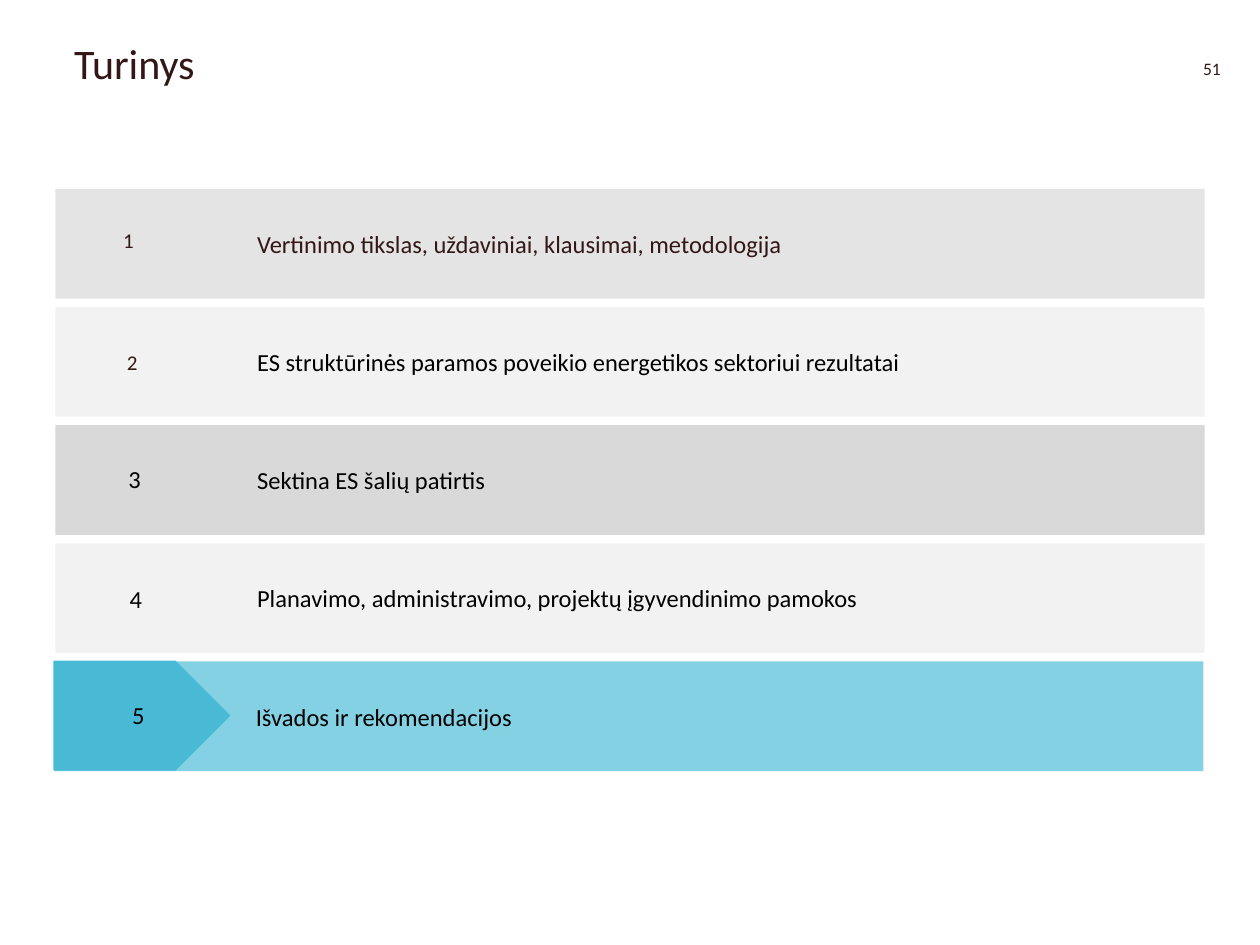
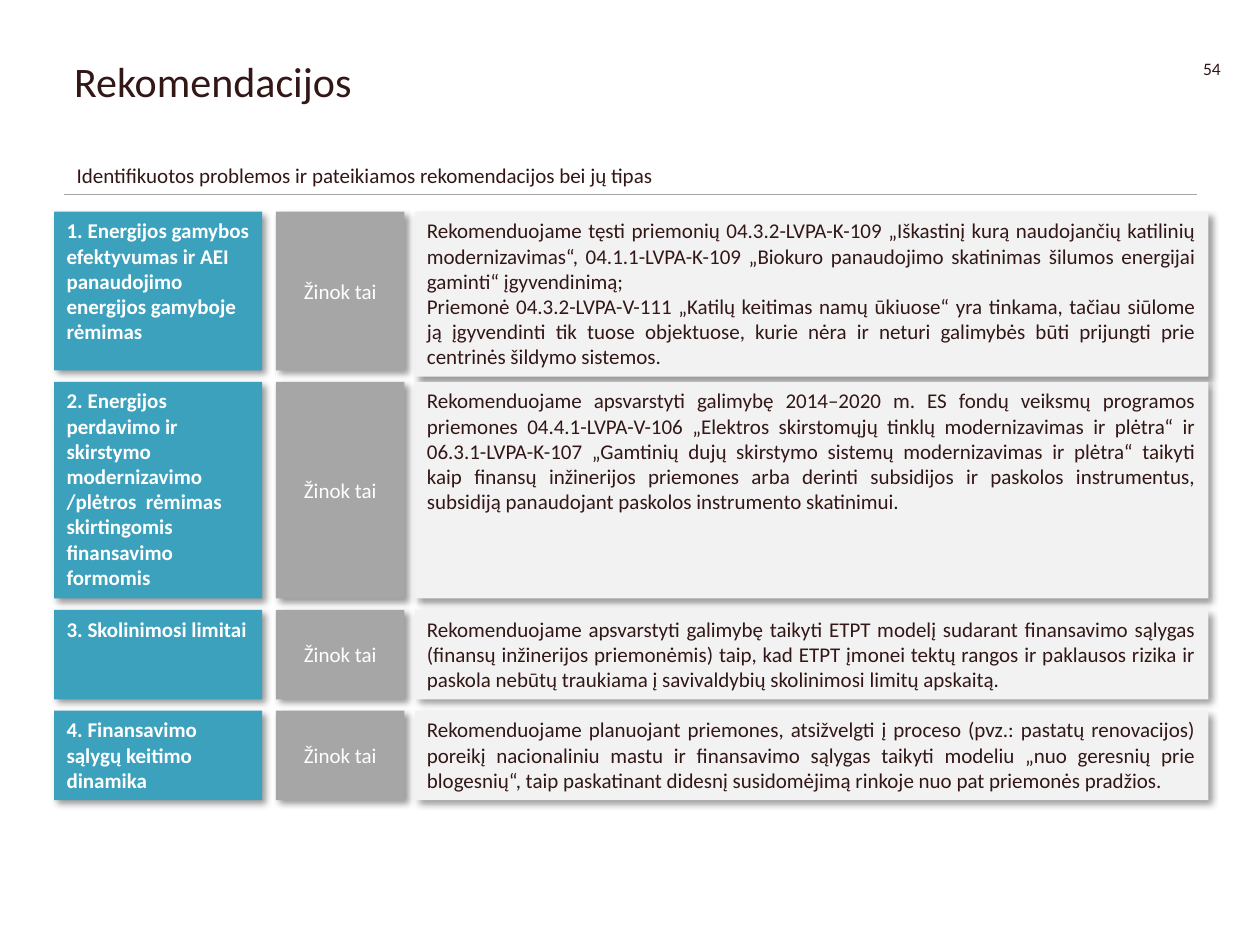
from lxml import etree
from pptx import Presentation
from pptx.dml.color import RGBColor as RGB
from pptx.enum.shapes import MSO_CONNECTOR as LINE, MSO_SHAPE as SHAPE
from pptx.enum.text import MSO_ANCHOR as ANCHOR, PP_ALIGN as ALIGN
from pptx.oxml import parse_xml
from pptx.oxml.ns import nsdecls, qn
from pptx.util import Inches, Pt

HUE = {
    "text": "321716", "black": "000000", "white": "FFFFFF",
    "grey": "D9D9D9", "pale": "F2F2F2", "mid": "A6A6A6",
    "aqua": "85D1E4", "blue": "48BAD6", "teal": "3BA1BC",
}
FONT = "Calibri"
SHADOW = (
    f'<a:effectLst {nsdecls("a")}><a:outerShdw blurRad="50800" dist="38100" '
    'dir="2700000" algn="tl" rotWithShape="0"><a:srgbClr val="000000">'
    '<a:alpha val="40000"/></a:srgbClr></a:outerShdw></a:effectLst>'
)


def box(slide, at, lines, size=12, hue="text", fill=None, kind=SHAPE.RECTANGLE,
        align=ALIGN.LEFT, anchor=ANCHOR.TOP, bold=False, space=None,
        inset=0.1, wrap=True, shade=False):
    """Add a text box, or a filled shape when a fill is given."""
    place = [Inches(v) for v in at]
    if fill:
        shape = slide.shapes.add_shape(kind, *place)
        shape.fill.solid()
        shape.fill.fore_color.rgb = RGB.from_string(HUE[fill])
        shape.line.fill.background()
        shape.shadow.inherit = False
        if shade:
            props = shape._element.spPr
            props.replace(props.find(qn("a:effectLst")), parse_xml(SHADOW))
    else:
        shape = slide.shapes.add_textbox(*place)
    frame = shape.text_frame
    frame.word_wrap = wrap
    frame.vertical_anchor = anchor
    frame.margin_left = Inches(inset)
    for n, line in enumerate(lines):
        para = frame.add_paragraph() if n else frame.paragraphs[0]
        para.text = line
        para.alignment = align
        if space:
            para.line_spacing = space
        para.font.name = FONT
        para.font.size = Pt(size)
        para.font.bold = bold
        para.font.color.rgb = RGB.from_string(HUE[hue])
    return shape


def page(title, top, number):
    """Start a slide with its title and page number."""
    slide = deck.slides.add_slide(deck.slide_layouts[6])
    box(slide, (9.45, 0.41, 0.37, 0.27), [number], 10, wrap=False)
    box(slide, (0.49, top, 8.82, 1.18), [title], 24, space=0.9)
    return slide


deck = Presentation()
deck.slide_width = Inches(10)
deck.slide_height = Inches(7.5)

# Contents
slide = page("Turinys", 0.29, "51")
topics = [
    # topic, band, text colour, number left, drop and size
    ("Vertinimo tikslas, uždaviniai, klausimai, metodologija", "grey", "text", 0.88, 0.24, 12),
    ("ES struktūrinės paramos poveikio energetikos sektoriui rezultatai",
     "pale", "black", 0.91, 0.27, 12),
    ("Sektina ES šalių patirtis", "grey", "black", 0.92, 0.26, 14),
    ("Planavimo, administravimo, projektų įgyvendinimo pamokos",
     "pale", "black", 0.93, 0.27, 14),
    ("Išvados ir rekomendacijos", "aqua", "black", 0.95, 0.26, 14),
]
for n, (topic, band, hue, left, drop, size) in enumerate(topics):
    top = 1.5 + n * 3.75 / 4
    start = 0.43 if band == "aqua" else 0.44
    row = box(slide, (start, top, 9.12, 0.87), [topic], 14, hue, band,
              anchor=ANCHOR.MIDDLE, inset=1.6)
    if n == 0:
        # The first band is lighter
        tone = row._element.spPr.find(qn("a:solidFill"))[0]
        etree.SubElement(tone, qn("a:alpha"), val="70000")
    if band == "aqua":
        # Arrow on the current topic
        tag = box(slide, (start, top, 1.39, 0.86), [], fill="blue", kind=SHAPE.PENTAGON)
        tag.line.color.rgb = RGB.from_string(HUE["blue"])
        tag.line.width = Pt(1)
    box(slide, (left, top + drop, 0.3, 0.34), [str(n + 1)], size,
        "text" if size == 12 else "black", space=1.1 if size == 12 else None, wrap=False)

# Recommendations
slide = page("Rekomendacijos", 0.44, "54")
rule = slide.shapes.add_connector(
    LINE.STRAIGHT, Inches(0.51), Inches(1.54), Inches(9.5), Inches(1.54))
rule.line.color.rgb = RGB.from_string(HUE["mid"])
rule.line.width = Pt(0.5)
etree.SubElement(rule._element.spPr, qn("a:effectLst"))
box(slide, (0.51, 1.22, 5.98, 0.32),
    ["Identifikuotos problemos ir pateikiamos rekomendacijos bei jų tipas"], space=1.1)

advice = [
    # top, label height, advice height, label, advice
    (1.68, 1.26, 1.31,
     ["1. Energijos gamybos efektyvumas ir AEI panaudojimo energijos gamyboje rėmimas"],
     ["Rekomenduojame tęsti priemonių 04.3.2-LVPA-K-109 „Iškastinį kurą naudojančių "
      "katilinių modernizavimas“, 04.1.1-LVPA-K-109 „Biokuro panaudojimo skatinimas "
      "šilumos energijai gaminti“ įgyvendinimą;",
      "Priemonė 04.3.2-LVPA-V-111 „Katilų keitimas namų ūkiuose“ yra tinkama, tačiau "
      "siūlome ją įgyvendinti tik tuose objektuose, kurie nėra ir neturi galimybės būti "
      "prijungti prie centrinės šildymo sistemos."]),
    (3.03, 1.72, 1.72,
     ["2. Energijos perdavimo ir skirstymo modernizavimo",
      "/plėtros  rėmimas skirtingomis finansavimo formomis"],
     ["Rekomenduojame apsvarstyti galimybę 2014–2020 m. ES fondų veiksmų programos "
      "priemones 04.4.1-LVPA-V-106 „Elektros skirstomųjų tinklų modernizavimas ir plėtra“ "
      "ir 06.3.1-LVPA-K-107 „Gamtinių dujų skirstymo sistemų modernizavimas ir plėtra“ "
      "taikyti kaip finansų inžinerijos priemones arba derinti subsidijos ir paskolos "
      "instrumentus, subsidiją panaudojant paskolos instrumento skatinimui."]),
    (4.84, 0.71, 0.71,
     ["3. Skolinimosi limitai"],
     ["Rekomenduojame apsvarstyti galimybę taikyti ETPT modelį sudarant finansavimo "
      "sąlygas (finansų inžinerijos priemonėmis) taip, kad ETPT įmonei tektų rangos ir "
      "paklausos rizika ir paskola nebūtų traukiama į savivaldybių skolinimosi limitų "
      "apskaitą."]),
    (5.64, 0.71, 0.71,
     ["4. Finansavimo sąlygų keitimo dinamika"],
     ["Rekomenduojame planuojant priemones, atsižvelgti į proceso (pvz.: pastatų "
      "renovacijos) poreikį nacionaliniu mastu ir finansavimo sąlygas taikyti modeliu "
      "„nuo geresnių prie blogesnių“, taip paskatinant didesnį susidomėjimą rinkoje nuo "
      "pat priemonės pradžios."]),
]
for top, high, tall, label, text in advice:
    box(slide, (0.43, top, 1.65, high), label, hue="white", fill="teal",
        bold=True, shade=True)
    box(slide, (3.29, top, 6.3, tall), text, fill="pale", align=ALIGN.JUSTIFY, shade=True)
    box(slide, (2.19, top, 1.02, high), ["Žinok tai"], hue="white", fill="mid",
        align=ALIGN.CENTER, anchor=ANCHOR.MIDDLE, shade=True)

deck.save("out.pptx")
